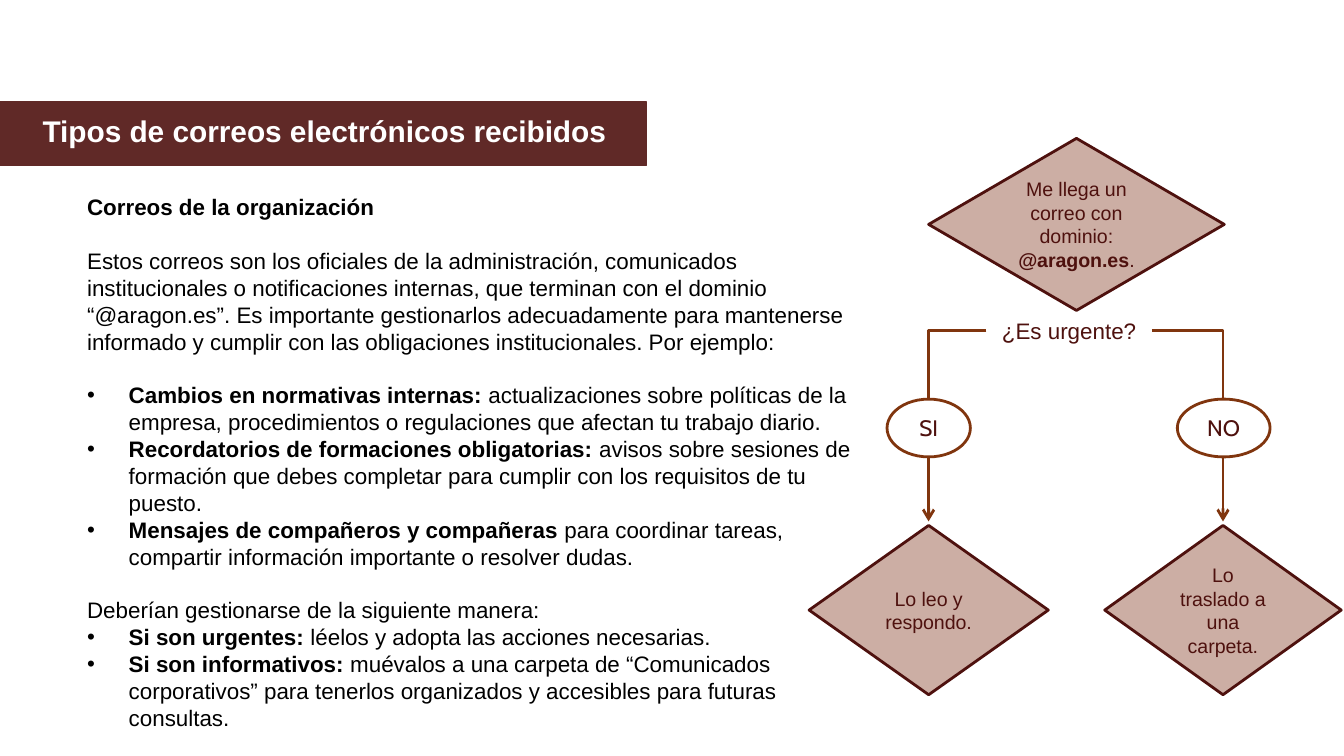
from lxml.etree import SubElement
from pptx import Presentation
from pptx.dml.color import RGBColor
from pptx.enum.shapes import MSO_CONNECTOR, MSO_SHAPE
from pptx.enum.text import MSO_ANCHOR, MSO_AUTO_SIZE, PP_ALIGN
from pptx.oxml.ns import qn
from pptx.util import Inches, Pt

WINE, ROSE, RUST, BAND = "4E110E", "CCAEA4", "80350E", "602927"
WHITE, BLACK = "FFFFFF", "000000"

presentation = Presentation()
presentation.slide_width = Inches(10)
presentation.slide_height = Inches(5.625)
column = presentation.slide_width / 100
row = presentation.slide_height / 100
slide = presentation.slides.add_slide(presentation.slide_layouts[5])


def paint(target, color):
    if hasattr(target, "solid"):
        target.solid()
        target.fore_color.rgb = RGBColor.from_string(color)
    elif hasattr(target, "fill"):
        paint(target.fill, color)
    else:
        target.rgb = RGBColor.from_string(color)


def write(frame, paragraphs, color, size, font="Arial", align=PP_ALIGN.CENTER,
          anchor=MSO_ANCHOR.MIDDLE, wrap=True):
    frame_format = {"word_wrap": wrap, "auto_size": MSO_AUTO_SIZE.NONE, "vertical_anchor": anchor}
    for name, value in frame_format.items():
        setattr(frame, name, value)
    for index, (bullet, gap, runs) in enumerate(paragraphs):
        paragraph = frame.add_paragraph() if index else frame.paragraphs[0]
        for name, value in {"alignment": align, "space_before": Pt(gap)}.items():
            setattr(paragraph, name, value)
        if bullet:
            properties = paragraph._p.get_or_add_pPr()
            properties.set("marL", str(Inches(0.31)))
            properties.set("indent", str(-Inches(0.31)))
            SubElement(properties, qn("a:buFont"), typeface="Arial")
            SubElement(properties, qn("a:buChar"), char="•")
        for text, bold in runs:
            run = paragraph.add_run()
            run.text = text
            for name, value in {"name": font, "size": Pt(size), "bold": bold}.items():
                setattr(run.font, name, value)
            paint(run.font.color, color)


band = slide.shapes.add_shape(
    MSO_SHAPE.RECTANGLE, 0, int(13.51 * row), int(48.1 * column), int(8.36 * row))
band.shadow.inherit = False
paint(band.fill, BAND)
paint(band.line, BAND)
band.line.width = Pt(0.75)
slide.shapes._spTree.insert(2, band._element)

title = slide.shapes.title
title_place = {"left": 0.6 * column, "top": 14.04 * row, "width": 47.1 * column, "height": 6.58 * row}
for name, value in title_place.items():
    setattr(title, name, int(value))
write(title.text_frame, [(False, 0, [("Tipos de correos electrónicos recibidos", True)])], WHITE, 16)

for start, end in [(73.4, 69.1), (85.7, 91)]:
    arrow = slide.shapes.add_connector(
        MSO_CONNECTOR.ELBOW, int(start * column), int(43.73 * row),
        int(end * column), int(68.98 * row))
    properties = arrow._element.spPr
    properties.find(qn("a:prstGeom")).set("prst", "bentConnector2")
    paint(arrow.line, RUST)
    arrow.line.width = Pt(1.5)
    SubElement(arrow.line._get_or_add_ln(), qn("a:tailEnd"), type="arrow")
    SubElement(properties, qn("a:effectLst"))

LINE_GAP = 14.4
body = [
    (False, 0, [("Correos de la organización", True)]),
    (False, LINE_GAP, [("Estos correos son los oficiales de la administración, comunicados institucionales o notificaciones internas, que terminan con el dominio “@aragon.es”. Es importante gestionarlos adecuadamente para mantenerse informado y cumplir con las obligaciones institucionales. Por ejemplo:", False)]),
    (True, LINE_GAP, [("Cambios en normativas internas:", True), (" actualizaciones sobre políticas de la empresa, procedimientos o regulaciones que afectan tu trabajo diario.", False)]),
    (True, 0, [("Recordatorios de formaciones obligatorias:", True), (" avisos sobre sesiones de formación que debes completar para cumplir con los requisitos de tu puesto.", False)]),
    (True, 0, [("Mensajes de compañeros y compañeras", True), (" para coordinar tareas, compartir información importante o resolver dudas.", False)]),
    (False, LINE_GAP, [("Deberían gestionarse de la siguiente manera:", False)]),
    (True, 0, [("Si son urgentes:", True), (" léelos y adopta las acciones necesarias.", False)]),
    (True, 0, [("Si son informativos:", True), (" muévalos a una carpeta de “Comunicados corporativos” para tenerlos organizados y accesibles para futuras consultas.", False)]),
]
body_box = slide.shapes.add_textbox(
    int(5.5 * column), int(24.71 * row), int(59.7 * column), int(73.6 * row))
paint(body_box.fill, WHITE)
write(body_box.text_frame, body, BLACK, 12, align=PP_ALIGN.LEFT, anchor=MSO_ANCHOR.TOP)

question = slide.shapes.add_textbox(
    int(73.4 * column), int(41.07 * row), int(12.3 * column), int(5.33 * row))
write(question.text_frame, [(False, 0, [("¿Es urgente?", False)])], WINE, 12, wrap=False)

diamond = (MSO_SHAPE.DIAMOND, ROSE, WINE, "Arial", 10.5, True)
oval = (MSO_SHAPE.OVAL, WHITE, RUST, "Cabin", 12, False)
steps = [
    (diamond, 69.1, 18.31, 22, 22.76, [("Me llega un correo con dominio: ", False), ("@aragon.es", True), (".", False)]),
    (diamond, 60.2, 69.51, 17.8, 22.4, [("Lo leo y respondo.", False)]),
    (diamond, 82.2, 69.51, 17.6, 22.4, [("Lo traslado a una carpeta.", False)]),
    (oval, 66, 52.8, 6.2, 7.64, [("SI", False)]),
    (oval, 87.6, 52.8, 6.9, 7.64, [("NO", False)]),
]
for (kind, fill, outline, font, size, wrap), left, top, width, height, runs in steps:
    shape = slide.shapes.add_shape(
        kind, int(left * column), int(top * row), int(width * column), int(height * row))
    shape.shadow.inherit = False
    paint(shape.fill, fill)
    paint(shape.line, outline)
    shape.line.width = Pt(1.5)
    write(shape.text_frame, [(False, 0, runs)], WINE, size, font, wrap=wrap)

presentation.save("out.pptx")
